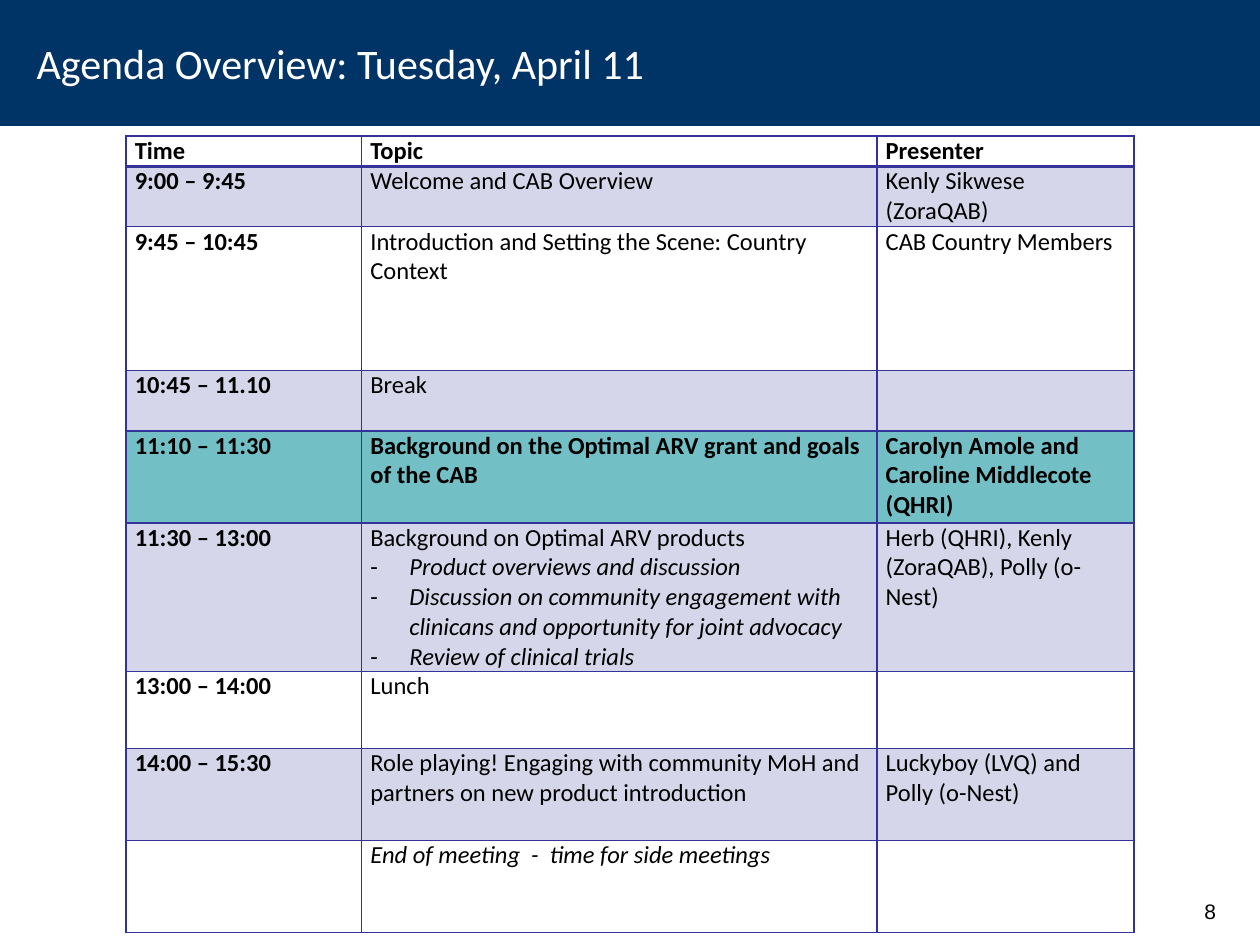
from lxml import etree
from pptx import Presentation
from pptx import util as u
from pptx.dml.color import RGBColor
from pptx.enum import text
from pptx.oxml.ns import qn

NAVY, INDIGO, TEAL, BLACK, WHITE = "003366", "333399", "72BFC5", "000000", "FFFFFF"
NO_STYLE = "{2D5ABB26-0587-4C30-8999-92F81FD0307C}"
COLUMN_WIDTHS = [1.87, 4.09, 2.04]

# Row height, background, whole row bold, then time, topic lines and presenter.
# A topic line starting with "- " is a bullet.
AGENDA = [
    (0.24, None, True, "Time", ["Topic"], "Presenter"),
    (0.48, INDIGO, False, "9:00 – 9:45", ["Welcome and CAB Overview"],
     "Kenly Sikwese (ZoraQAB)"),
    (1.14, None, False, "9:45 – 10:45",
     ["Introduction and Setting the Scene: Country Context"], "CAB Country Members"),
    (0.48, INDIGO, False, "10:45 – 11.10", ["Break"], ""),
    (0.73, TEAL, True, "11:10 – 11:30",
     ["Background on the Optimal ARV grant and goals of the CAB"],
     "Carolyn Amole and Caroline Middlecote (QHRI)"),
    (1.18, INDIGO, False, "11:30 – 13:00",
     ["Background on Optimal ARV products",
      "- Product overviews and discussion",
      "- Discussion on community engagement with clinicans and opportunity "
      "for joint advocacy",
      "- Review of clinical trials"],
     "Herb (QHRI), Kenly (ZoraQAB), Polly (o-Nest)"),
    (0.61, None, False, "13:00 – 14:00", ["Lunch"], ""),
    (0.73, INDIGO, False, "14:00 – 15:30",
     ["Role playing! Engaging with community MoH and partners on new product "
      "introduction"],
     "Luckyboy (LVQ) and Polly (o-Nest)"),
    (0.73, None, False, "", ["End of meeting  -  time for side meetings"], ""),
]


def rgb(value):
    return RGBColor.from_string(value)


def indent(paragraph, left, first=0):
    properties = paragraph._p.get_or_add_pPr()
    properties.set("marL", str(u.Inches(left)))
    properties.set("indent", str(u.Inches(first)))
    return properties


class AgendaSlide:
    def __init__(self, presentation):
        self.slide = presentation.slides.add_slide(presentation.slide_layouts[5])
        self.font = "Calibri"
        self.body_size = 14

    def style(self, paragraph, size, color=BLACK, bold=False, italic=False, font=None):
        face = paragraph.font
        face.name, face.size = font or self.font, u.Pt(size)
        face.bold, face.italic = bold, italic
        face.color.rgb = rgb(color)

    def title(self, words):
        banner = self.slide.shapes.title
        banner.left, banner.top = u.Inches(0), u.Inches(0)
        banner.width, banner.height = u.Inches(10), u.Inches(1)
        banner.fill.solid()
        banner.fill.fore_color.rgb = rgb(NAVY)
        frame = banner.text_frame
        frame.text = words
        frame.vertical_anchor = text.MSO_ANCHOR.MIDDLE
        heading = frame.paragraphs[0]
        heading.alignment = text.PP_ALIGN.LEFT
        indent(heading, 0.19)
        self.style(heading, 24, WHITE)

    def page_number(self, number):
        box = self.slide.shapes.add_textbox(
            u.Inches(7.67), u.Inches(7.08), u.Inches(2.08), u.Inches(0.5))
        box.text_frame.word_wrap = True
        paragraph = box.text_frame.paragraphs[0]
        paragraph.text = number
        paragraph.alignment = text.PP_ALIGN.RIGHT
        self.style(paragraph, 12, font="Arial")

    def borders(self, cell, bottom):
        properties = cell._tc.get_or_add_tcPr()
        widths = {"a:lnL": 1, "a:lnR": 1, "a:lnT": 1, "a:lnB": bottom}
        for position, (side, width) in enumerate(widths.items()):
            line = etree.Element(qn(side), w=str(u.Pt(width)))
            fill = etree.SubElement(line, qn("a:solidFill"))
            etree.SubElement(fill, qn("a:srgbClr"), val=INDIGO)
            properties.insert(position, line)

    def background(self, cell, color):
        if color is None:
            cell.fill.background()
            return
        cell.fill.solid()
        cell.fill.fore_color.rgb = rgb(color)
        if color == INDIGO:
            tint = cell._tc.tcPr.find(".//" + qn("a:srgbClr"))
            etree.SubElement(tint, qn("a:alpha"), val="20000")

    def bullet(self, paragraph):
        properties = indent(paragraph, 0.31, -0.31)
        properties.insert(0, etree.Element(qn("a:buFont"), typeface=self.font))
        properties.insert(1, etree.Element(qn("a:buChar"), char="-"))

    def cell_text(self, cell, lines, bold):
        cell.margin_left = cell.margin_right = u.Inches(0.07)
        cell.margin_top = cell.margin_bottom = 0
        cell.vertical_anchor = text.MSO_ANCHOR.TOP
        frame = cell.text_frame
        for number, line in enumerate(lines):
            paragraph = frame.add_paragraph() if number else frame.paragraphs[0]
            bulleted = line.startswith("- ")
            paragraph.text = line.removeprefix("- ")
            italic = bulleted or line.startswith("End of meeting")
            self.style(paragraph, self.body_size, bold=bold, italic=italic)
            if bulleted:
                self.bullet(paragraph)

    def agenda(self, rows):
        table = self.slide.shapes.add_table(
            len(rows), len(COLUMN_WIDTHS), u.Inches(1), u.Inches(1.08),
            u.Inches(8), u.Inches(sum(row[0] for row in rows))).table
        table.first_row = table.horz_banding = False
        table._tbl.tblPr.find(qn("a:tableStyleId")).text = NO_STYLE
        for column, width in zip(table.columns, COLUMN_WIDTHS):
            column.width = u.Inches(width)
        for r, (height, color, bold, time, topic, presenter) in enumerate(rows):
            table.rows[r].height = u.Inches(height)
            for c, lines in enumerate([[time], topic, [presenter]]):
                cell = table.cell(r, c)
                self.cell_text(cell, lines, bold or c == 0)
                self.background(cell, color)
                self.borders(cell, bottom=2 if r == 0 else 1)


def main():
    presentation = Presentation()
    presentation.slide_width = u.Inches(10)
    presentation.slide_height = u.Inches(7.5)
    overview = AgendaSlide(presentation)
    overview.page_number("8")
    overview.title("Agenda Overview: Tuesday, April 11")
    overview.agenda(AGENDA)
    presentation.save("out.pptx")


if __name__ == "__main__":
    main()
